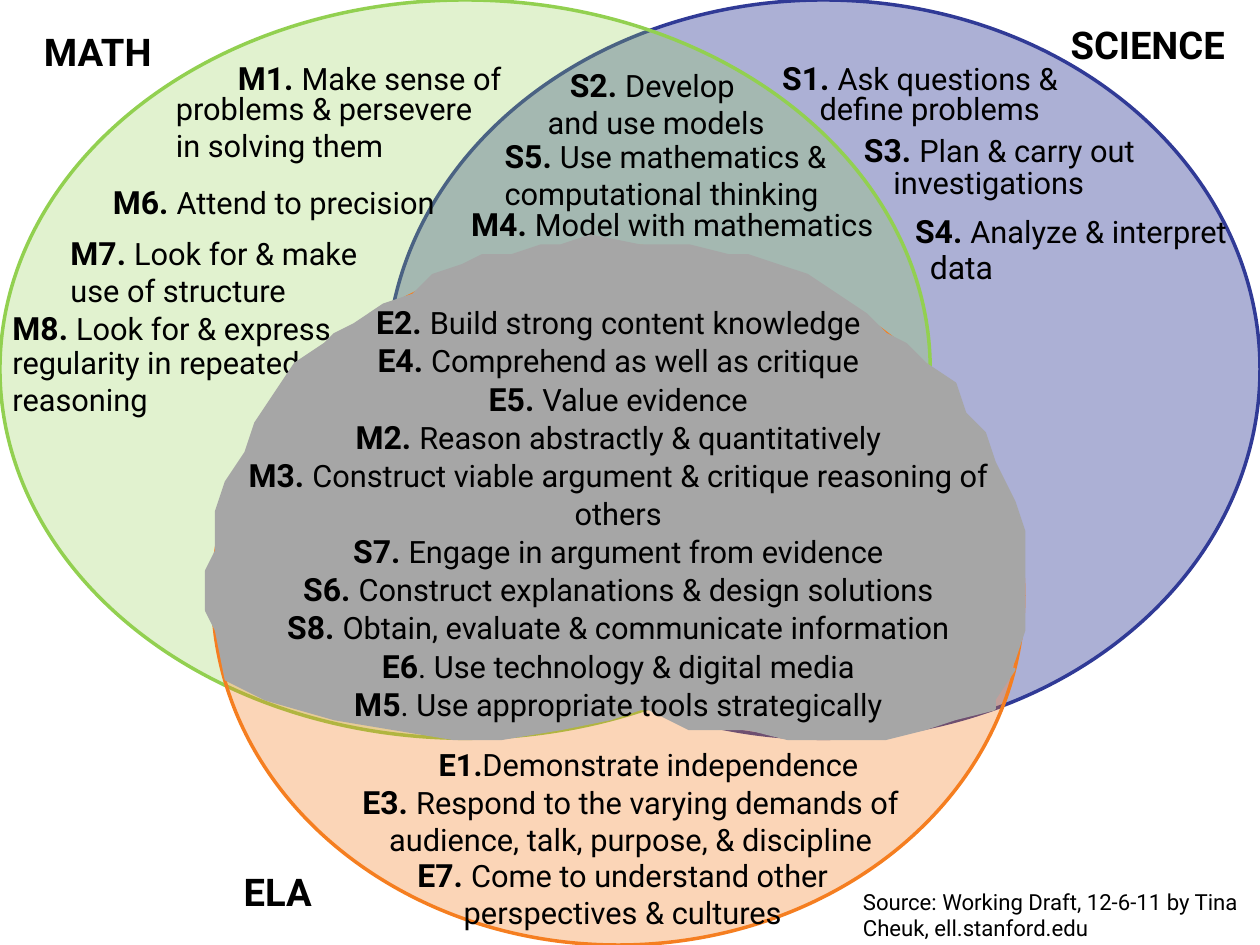
from lxml import etree
from pptx import Presentation
from pptx import util as u
from pptx.dml import color as dml
from pptx.enum import shapes, text
from pptx.oxml import ns

COLUMNS, ROWS = 128, 96
LEFT, CENTER = text.PP_ALIGN.LEFT, text.PP_ALIGN.CENTER


def rgb(value):
    return dml.RGBColor.from_string(value)


def apply(target, values):
    for name, value in values.items():
        setattr(target, name, value)


class VennSlide:
    cell = u.Inches(1) / 9
    line_width = u.Pt(2.84)
    font = {"name": "Roboto", "italic": False}
    frame = {
        "word_wrap": True,
        "auto_size": text.MSO_AUTO_SIZE.NONE,
        "vertical_anchor": text.MSO_ANCHOR.TOP,
        "margin_left": u.Inches(0.14),
        "margin_right": u.Inches(0.14),
        "margin_top": u.Inches(0.08),
        "margin_bottom": u.Inches(0.08),
    }

    def __init__(self, presentation):
        apply(presentation, {"slide_width": self.length(COLUMNS),
                             "slide_height": self.length(ROWS)})
        self.slide = presentation.slides.add_slide(presentation.slide_layouts[1])

    def length(self, cells):
        return u.Emu(round(cells * self.cell))

    def box(self, area):
        return [self.length(cells) for cells in area]

    def paint(self, shape, color, opacity=100):
        shape.shadow.inherit = False
        shape.fill.solid()
        shape.fill.fore_color.rgb = rgb(color)
        shape.line.color.rgb = rgb(color)
        shape.line.width = self.line_width
        if opacity < 100:
            fill = shape.element.spPr.find(ns.qn("a:solidFill"))
            alpha = etree.SubElement(fill[0], ns.qn("a:alpha"))
            alpha.set("val", str(opacity * 1000))

    def circle(self, area, color, opacity):
        shape = self.slide.shapes.add_shape(shapes.MSO_SHAPE.OVAL, *self.box(area))
        self.paint(shape, color, opacity)

    def outline(self, points, color):
        builder = self.slide.shapes.build_freeform(*points[0], scale=self.cell)
        builder.add_line_segments(points[1:], close=True)
        self.paint(builder.convert_to_shape(), color)

    def add_words(self, paragraph, words, size, bold):
        run = paragraph.add_run()
        run.text = words
        apply(run.font, {**self.font, "size": u.Pt(size), "bold": bold})
        run.font.color.rgb = rgb("000000")

    def add_lines(self, shape, lines, align=LEFT, size=25, code_size=26):
        apply(shape.text_frame, self.frame)
        for index, (code, words) in enumerate(lines):
            paragraph = (shape.text_frame.add_paragraph() if index
                         else shape.text_frame.paragraphs[0])
            apply(paragraph, {"alignment": align, "space_before": u.Pt(0)})
            if code:
                self.add_words(paragraph, code, code_size, True)
            if words:
                self.add_words(paragraph, words, size, False)

    def note(self, area, lines, **style):
        self.add_lines(self.slide.shapes.add_textbox(*self.box(area)), lines, **style)

    def placeholder(self, index, area, lines, **style):
        shape = self.slide.placeholders[index]
        apply(shape, dict(zip(("left", "top", "width", "height"), self.box(area))))
        shape.element.getparent().append(shape.element)
        self.add_lines(shape, lines, **style)
        for properties in shape.element.iter(ns.qn("a:pPr")):
            properties.set("marL", "0")
            properties.set("indent", "0")
            etree.SubElement(properties, ns.qn("a:buNone"))


CIRCLES = [
    ((39.3, 0, 88.7, 75), "303A96", 40),
    ((0, 0, 94.5, 75), "92D050", 27),
    ((21.6, 25, 82.4, 71), "F57E20", 32),
]

LEFT_NOTES = [
    ((50, 13.1, 37.7, 13.1), "S5. ", "Use mathematics & computational thinking"),
    ((10.2, 17.8, 36.2, 9.3), "M6. ", "Attend to precision"),
    ((5.9, 23, 34.4, 9.3), "M7. ", "Look for & make use of structure"),
    ((46.6, 20.1, 48.9, 9.3), "M4. ", "Model with mathematics"),
    ((22.9, 5.2, 40.7, 5.3), "M1. ", "Make sense of"),
    ((16.6, 8.4, 34.6, 17.1), "", "problems & persevere in solving them"),
    ((0, 30.6, 38.5, 5.3), "M8. ", "Look for & express"),
    ((0, 34.2, 35.3, 9.7), "", "regularity in repeated reasoning"),
    ((78.2, 5.2, 30.9, 5.3), "S1. ", "Ask questions &"),
    ((82, 8.4, 26.1, 5.3), "", "define problems"),
    ((86.5, 12.5, 33, 5.3), "S3. ", "Plan & carry out"),
    ((89.5, 15.9, 22.9, 5.3), "", "investigations"),
    ((91.7, 20.8, 35.1, 5.3), "S4. ", "Analyze & interpret"),
]

CENTERED_NOTES = [
    ((29.2, 78.8, 69.7, 8.2), [
        ("E3. ", "Respond to the varying demands of audience, talk, purpose, & discipline")]),
    ((40.3, 86.2, 45.9, 11.4), [
        ("E7. ", "Come to understand other perspectives & cultures")]),
    ((53.1, 5.9, 27.1, 9.3), [("S2. ", "Develop "), ("", "and use models")]),
]

UPPER_OVERLAP = [
    (22.7, 69.3), (21.5, 64.4), (21.3, 61.5), (21.3, 57.9), (21.5, 56), (21.9, 53.9),
    (22.3, 52.2), (23.2, 49.1), (24.6, 46.3), (26.3, 43.4), (28.4, 40), (30.4, 37.4),
    (32.9, 35), (34.5, 34), (36, 32.9), (38.6, 31), (41.7, 29.7), (43.7, 28.4),
    (46.6, 27), (49.3, 26.2), (51.6, 25.7), (54.8, 25.1), (56.7, 24.7), (59.8, 24.5),
    (64.9, 24.7), (68, 24.7), (70.2, 24.9), (73.6, 25.7), (76.3, 26.5), (79.4, 27.4),
    (82.3, 28.5), (84.9, 29.9), (87.9, 31.8), (90, 33.5), (92.2, 35.2), (94.4, 37.1),
    (96.7, 39.4), (98.2, 41.7), (99.9, 44.4), (101.4, 47.4), (103, 51), (103.8, 53.9),
    (104.1, 57), (104.1, 59.8), (103.8, 64.2), (103, 67.1), (102.4, 68.8),
]

LOWER_OVERLAP = [
    (23, 69.3), (27, 70.8), (33.8, 73.1), (40.1, 74.4), (45.9, 74.8), (50.7, 74.8),
    (57.3, 74.3), (62.2, 73.1), (65.3, 72.2), (65.8, 72), (70, 73.5), (75.7, 74.4),
    (80, 74.8), (85, 75), (89.6, 74.6), (93.5, 73.9), (97.1, 73.1), (100.7, 71.8),
    (101.4, 71.2), (102.8, 68.4),
]

SHARED_PRACTICES = [
    ("E2. ", "Build strong content knowledge"),
    ("E4. ", "Comprehend as well as critique"),
    ("E5. ", "Value evidence"),
    ("M2. ", "Reason abstractly & quantitatively"),
    ("M3. ", "Construct viable argument & critique reasoning of others"),
    ("S7. ", "Engage in argument from evidence"),
    ("S6. ", "Construct explanations & design solutions"),
    ("S8. ", "Obtain, evaluate & communicate information"),
    ("E6", ". Use technology & digital media"),
    ("M5", ". Use appropriate tools strategically"),
]


def main():
    presentation = Presentation()
    venn = VennSlide(presentation)
    for area, color, opacity in CIRCLES:
        venn.circle(area, color, opacity)
    for area, code, words in LEFT_NOTES:
        venn.note(area, [(code, words)])
    venn.note((93.2, 24.4, 18.8, 5.3), [("", "data")], size=26)
    venn.note((43.3, 75, 51.3, 10.7), [("E1.", "Demonstrate independence")], code_size=25)
    for area, lines in CENTERED_NOTES:
        venn.note(area, lines, align=CENTER)
    for points in (UPPER_OVERLAP, LOWER_OVERLAP):
        venn.outline(points, "A6A6A6")
    venn.placeholder(1, (22.7, 30, 80.2, 48.6), SHARED_PRACTICES, align=CENTER)
    venn.placeholder(0, (3.2, 2.2, 14.5, 5.8), [("MATH", "")], code_size=31)
    venn.note((107.5, 1.5, 20.5, 4.5), [("SCIENCE", "")], code_size=31)
    venn.note((23.5, 87.5, 11.3, 6), [("ELA", "")], code_size=31)
    venn.note((86.4, 89.5, 41.6, 7.4), [
        ("", "Source: Working Draft, 12-6-11 by Tina Cheuk, ell.stanford.edu")], size=18)
    presentation.save("out.pptx")


if __name__ == "__main__":
    main()
